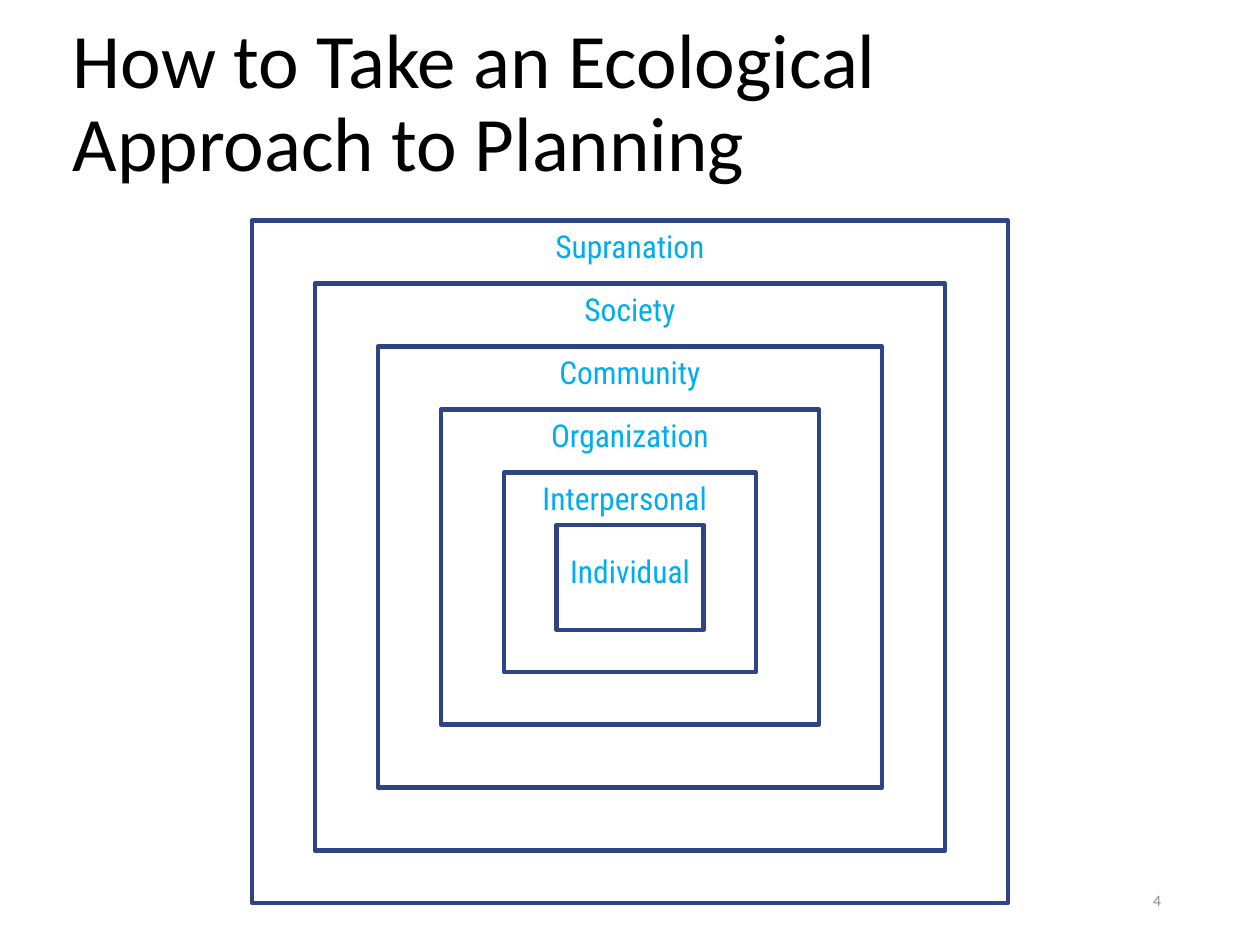
from pptx import Presentation
from pptx import util as u
from pptx.dml.color import RGBColor
from pptx.enum import shapes, text

PX = 9525
NAVY = RGBColor(0x2E, 0x44, 0x85)
CYAN = RGBColor(0x00, 0xAD, 0xEF)
BLACK = RGBColor(0x00, 0x00, 0x00)
GREY = RGBColor(0x8C, 0x8C, 0x8C)

LEFT, TOP, WIDTH, STEP = 192, 168, 576, 48
LABEL_HEIGHT = 38
OUTER_LEVELS = [
    ("Supranation", 520, 576),
    ("Society", 432, 480),
    ("Community", 336, 384),
    ("Organization", 240, 288),
    ("Interpersonal", 152, 184),
]


def px(*lengths):
    return [u.Emu(length * PX) for length in lengths]


def write(shape, words, font="Roboto Condensed", size=18, color=CYAN,
          align=text.PP_ALIGN.CENTER, anchor=text.MSO_ANCHOR.TOP, spacing=None):
    frame = shape.text_frame
    frame.word_wrap = True
    frame.vertical_anchor = anchor
    para = frame.paragraphs[0]
    para.alignment = align
    para.line_spacing = spacing
    span = para.add_run()
    span.text = words
    span.font.name = font
    span.font.size = u.Pt(size)
    span.font.color.rgb = color


def add_title(page, words):
    title = page.shapes.title
    title.left, title.top, title.width, title.height = px(46, 28, 848, 104)
    write(title, words, font="Calibri", size=44, color=BLACK,
          align=text.PP_ALIGN.LEFT, anchor=text.MSO_ANCHOR.MIDDLE, spacing=0.9)
    title.text_frame.auto_size = text.MSO_AUTO_SIZE.NONE


def add_frame(page, left, top, width, height):
    box = page.shapes.add_shape(shapes.MSO_SHAPE.RECTANGLE, *px(left, top, width, height))
    box.shadow.inherit = False
    box.fill.background()
    box.line.color.rgb = NAVY
    box.line.width = u.Pt(2.5)


def add_text(page, words, left, top, width, height=LABEL_HEIGHT, **style):
    box = page.shapes.add_textbox(*px(left, top, width, height))
    write(box, words, **style)


def add_levels(page):
    for level, (name, height, label_width) in enumerate(OUTER_LEVELS):
        inset = level * STEP
        left, top = LEFT + inset, TOP + inset
        add_frame(page, left, top, WIDTH - 2 * inset, height)
        add_text(page, name, left, top, label_width)
    add_frame(page, 424, 400, 112, 80)
    add_text(page, "Individual", 416, 416, 128)


def main():
    deck = Presentation()
    deck.slide_width, deck.slide_height = px(960, 720)
    page = deck.slides.add_slide(deck.slide_layouts[5])
    add_title(page, "How to Take an Ecological Approach to Planning")
    add_text(page, "4", 678, 667, 216, font="Calibri", size=9, color=GREY,
             align=text.PP_ALIGN.RIGHT, anchor=text.MSO_ANCHOR.MIDDLE)
    add_levels(page)
    deck.save("out.pptx")


if __name__ == "__main__":
    main()
